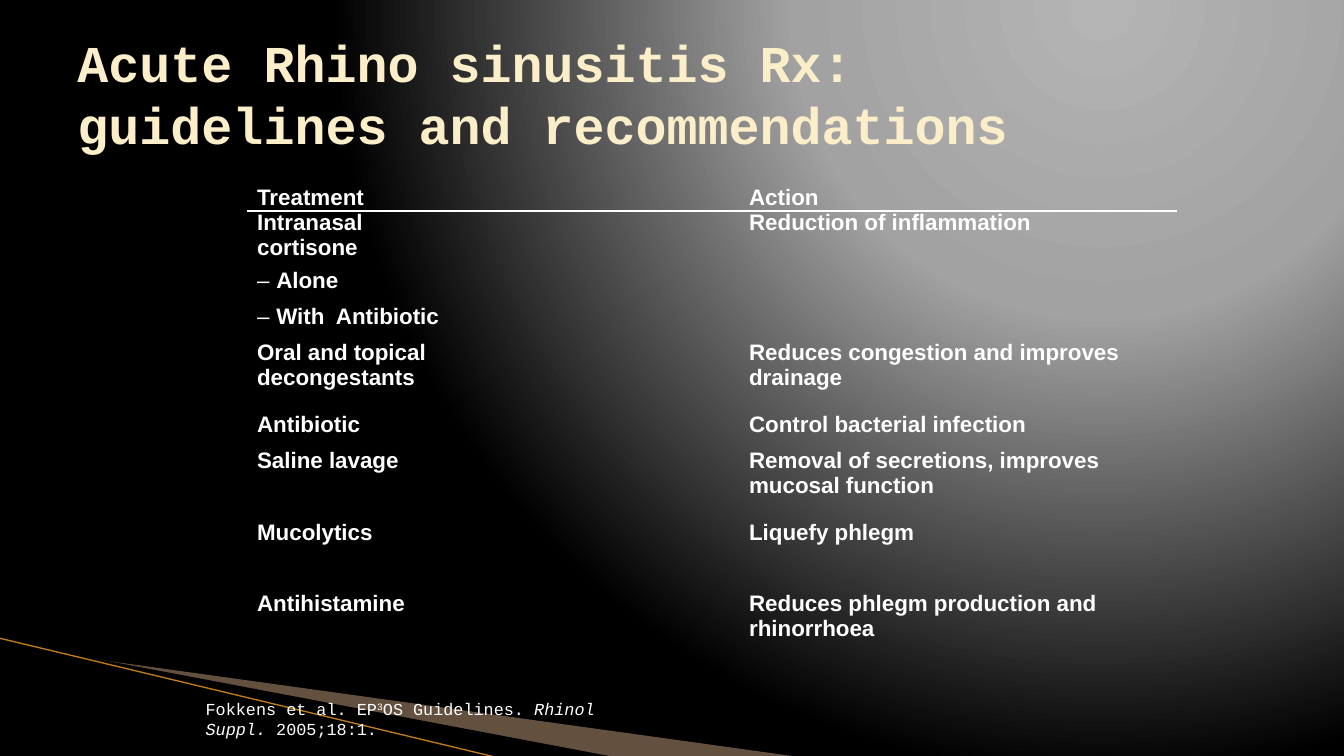
from pptx import Presentation, oxml
from pptx.dml.color import RGBColor
from pptx.enum import shapes, text
from pptx.oxml import ns
from pptx.util import Inches, Pt
from lxml import etree

# Content
TITLE = "Acute Rhino sinusitis Rx:\vguidelines and recommendations"
TREATMENTS = [  # treatment, action, row height
    ("Treatment", "Action", 0.82),
    ("Intranasal\vcortisone", "Reduction of inflammation", 0.57),
    ("– Alone", "", 0.36),
    ("– With  Antibiotic", "", 0.36),
    ("Oral and topical decongestants", "Reduces congestion and improves drainage", 0.71),
    ("Antibiotic", "Control bacterial infection", 0.36),
    ("Saline lavage", "Removal of secretions, improves mucosal function", 0.71),
    ("Mucolytics", "Liquefy phlegm", 0.71),
    ("Antihistamine", "Reduces phlegm production and rhinorrhoea", 0.72),
]
COLUMN_WIDTHS = (2.35, 2.53, 4.34)
CITATION = [("Fokkens et al. EP", {}), ("3", {"baseline": "30000"}), ("OS Guidelines. ", {}),
            ("Rhinol Suppl.", {"i": "1"}), (" 2005;18:1.", {})]
BACKDROP = [(0, "B4B4B4"), (40, "A2A2A2"), (100, "000000")]
WEDGES = [  # points, colour, opacity in percent
    ([(0.73, 6.51), (7.93, 7.51), (6.08, 7.51), (0.73, 6.5)], "FBC99E", 40),
    ([(0.71, 6.49), (6.09, 7.51), (4.96, 7.52), (0.72, 6.5)], "000000", 100),
]
WHITE = "FFFFFF"
TITLE_FONT = {"name": "Courier New", "size": Pt(36.9), "bold": True}
CELL_FONT = {"name": "Arial", "size": Pt(16), "bold": True}
CITATION_FONT = {"name": "Courier New", "size": Pt(12)}


def colour(hex_value):
    return RGBColor.from_string(hex_value)


def style(run, formats, hex_value):
    for key, value in formats.items():
        setattr(run.font, key, value)
    run.font.color.rgb = colour(hex_value)


def text_frame(box, anchor, margin):
    frame = slide.shapes.add_textbox(*map(Inches, box)).text_frame
    frame.word_wrap = True
    frame.vertical_anchor = anchor
    frame.margin_left = frame.margin_right = Inches(margin)
    frame.margin_top = frame.margin_bottom = Inches(margin / 2)
    return frame


def set_borders(cell, ruled_side):
    """Rule one side in white and switch the other sides off."""
    props = cell._tc.get_or_add_tcPr()
    for position, side in enumerate(("lnL", "lnR", "lnT", "lnB")):
        paint = "<a:noFill/>"
        if side == ruled_side:
            paint = f'<a:solidFill><a:srgbClr val="{WHITE}"/></a:solidFill>'
        props.insert(position, oxml.parse_xml(
            f'<a:{side} {ns.nsdecls("a")} w="{Pt(1.5)}">{paint}</a:{side}>'))


def dash_bullet(paragraph):
    props = paragraph._p.get_or_add_pPr()
    props.set("marL", str(Inches(0.19)))
    props.set("indent", str(-Inches(0.19)))
    bullet_colour = etree.SubElement(props, ns.qn("a:buClr"))
    etree.SubElement(bullet_colour, ns.qn("a:srgbClr"), val=WHITE)
    etree.SubElement(props, ns.qn("a:buFont"), typeface="Arial")
    etree.SubElement(props, ns.qn("a:buChar"), char="–")


deck = Presentation()
deck.slide_width, deck.slide_height = Inches(13.33), Inches(7.5)
slide = deck.slides.add_slide(deck.slide_layouts[6])

# Radial background
slide.background.fill.solid()
solid = slide._element.find(".//" + ns.qn("a:solidFill"))
stops = "".join(f'<a:gs pos="{pos * 1000}"><a:srgbClr val="{value}"/></a:gs>'
                for pos, value in BACKDROP)
solid.getparent().replace(solid, oxml.parse_xml(
    f'<a:gradFill {ns.nsdecls("a")} rotWithShape="1"><a:gsLst>{stops}</a:gsLst>'
    '<a:path path="circle"><a:fillToRect l="65000" t="0" r="0" b="98000"/></a:path></a:gradFill>'))

# Corner wedges and line
for points, value, opacity in WEDGES:
    outline = slide.shapes.build_freeform(
        Inches(points[0][0]), Inches(points[0][1]), scale=1.0)
    outline.add_line_segments([(Inches(x), Inches(y)) for x, y in points[1:]], close=True)
    wedge = outline.convert_to_shape()
    wedge.shadow.inherit = False
    wedge.fill.solid()
    wedge.fill.fore_color.rgb = colour(value)
    wedge.line.fill.background()
    shade = wedge._element.spPr.find(".//" + ns.qn("a:srgbClr"))
    etree.SubElement(shade, ns.qn("a:alpha"), val=str(opacity * 1000))

corner_line = slide.shapes.add_connector(
    shapes.MSO_CONNECTOR.STRAIGHT, Inches(-0.01), Inches(6.33), Inches(4.95), Inches(7.52))
corner_line.line.color.rgb = colour("C07C1C")
corner_line.line.width = Pt(0.95)
etree.SubElement(corner_line._element.spPr, ns.qn("a:effectLst"))

# Title
heading = text_frame((0.67, 0.3, 12, 1.25), text.MSO_ANCHOR.MIDDLE, 0.1).paragraphs[0]
heading.text = TITLE
for run in heading.runs:
    style(run, TITLE_FONT, "FBEEC9")

# Treatment table
heights = [row[2] for row in TREATMENTS]
table = slide.shapes.add_table(
    len(TREATMENTS), len(COLUMN_WIDTHS), Inches(2.45), Inches(1.27),
    Inches(sum(COLUMN_WIDTHS)), Inches(sum(heights))).table
table.first_row = table.horz_banding = False
for column, width in zip(table.columns, COLUMN_WIDTHS):
    column.width = Inches(width)
for r, (treatment, action, height) in enumerate(TREATMENTS):
    table.rows[r].height = Inches(height)
    for c, words in enumerate((treatment, "", action)):
        cell = table.cell(r, c)
        cell.margin_left = cell.margin_right = Inches(0.1)
        cell.margin_top = cell.margin_bottom = 0
        cell.vertical_anchor = text.MSO_ANCHOR.BOTTOM if r == 0 else text.MSO_ANCHOR.TOP
        cell.fill.background()
        set_borders(cell, {0: "lnB", 1: "lnT"}.get(r))
        entry = cell.text_frame.paragraphs[0]
        if words.startswith("– "):
            dash_bullet(entry)
        entry.text = words.removeprefix("– ")
        for run in entry.runs:
            style(run, CELL_FONT, WHITE)

# Citation
citation = text_frame((2.04, 7.08, 4.53, 0.25), text.MSO_ANCHOR.BOTTOM, 0).paragraphs[0]
for words, extras in CITATION:
    run = citation.add_run()
    run.text = words
    style(run, CITATION_FONT, WHITE)
    for key, value in extras.items():
        run.font._element.set(key, value)

deck.save("out.pptx")
